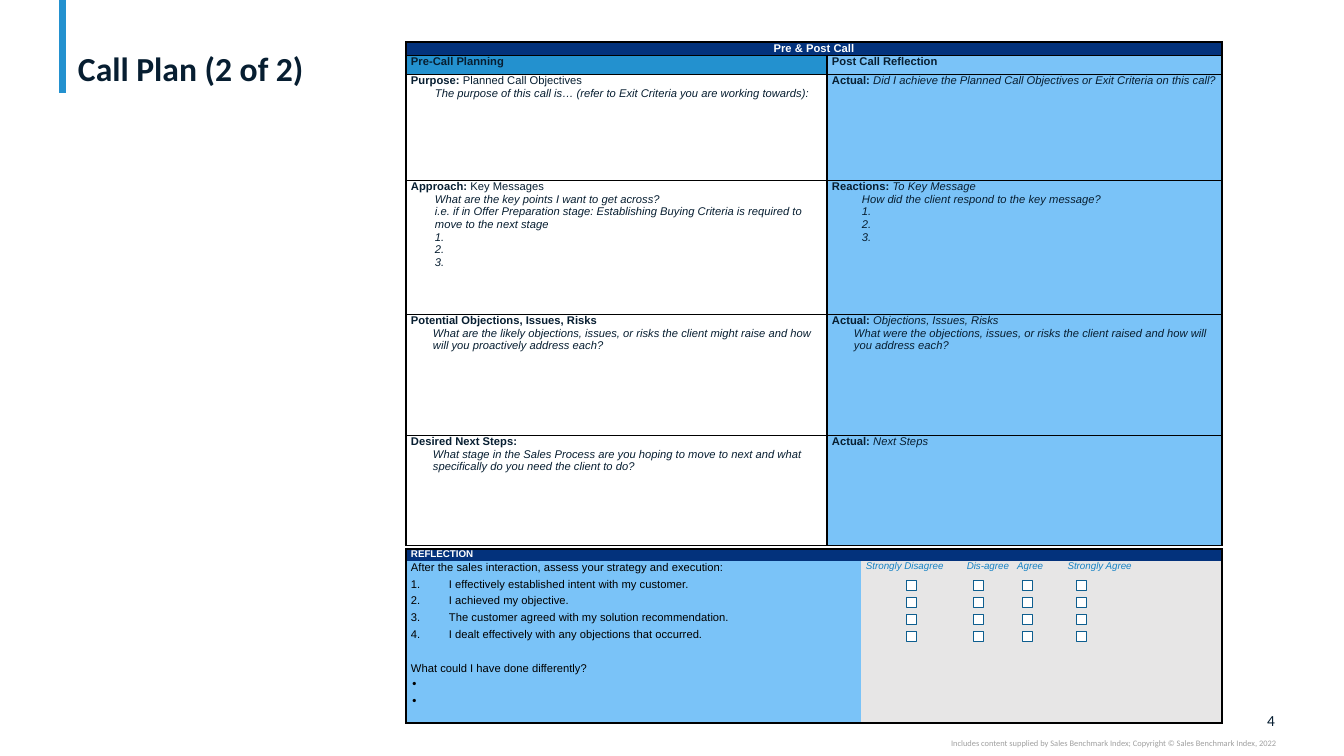
import pptx
import pptx.dml.color
import pptx.enum.shapes
import pptx.enum.text
import pptx.oxml.ns
import pptx.util
import lxml.etree

RGBColor = pptx.dml.color.RGBColor
INK = RGBColor(0x07, 0x1E, 0x31)
BLACK = RGBColor(0, 0, 0)
WHITE = RGBColor(0xFF, 0xFF, 0xFF)
NAVY = RGBColor(0x03, 0x32, 0x7C)
BLUE = RGBColor(0x23, 0x91, 0xCF)
SKY = RGBColor(0x7A, 0xC3, 0xF8)
PALE_GRAY = RGBColor(0xE7, 0xE6, 0xE6)
TEXT_GRAY = RGBColor(0xA0, 0xA0, 0xA0)
LABEL_BLUE = RGBColor(0x14, 0x81, 0xC4)
BOX_BLUE = RGBColor(0x0E, 0x5E, 0x8F)
PX = 914400 / 100.8
NO_STYLE = "{2D5ABB26-0587-4C30-8999-92F81FD0307C}"
qn = pptx.oxml.ns.qn
Align = pptx.enum.text.PP_ALIGN
Anchor = pptx.enum.text.MSO_ANCHOR


def write_paragraph(frame, runs, size=8, color=INK, name="Arial", indent=0, hanging=0,
                    before=0, align=Align.LEFT, marker=None, tabs=()):
    para = frame.paragraphs[0]
    if para.runs:
        para = frame.add_paragraph()
    para.alignment = align
    para.space_before = pptx.util.Pt(before)
    properties = para._p.get_or_add_pPr()
    properties.set("marL", str(round(indent * PX)))
    properties.set("indent", str(round(-hanging * PX)))
    if marker == "number":
        lxml.etree.SubElement(properties, qn("a:buAutoNum"), type="arabicPeriod")
    elif marker:
        lxml.etree.SubElement(properties, qn("a:buChar"), char=marker)
    else:
        lxml.etree.SubElement(properties, qn("a:buNone"))
    if tabs:
        stops = lxml.etree.SubElement(properties, qn("a:tabLst"))
        for stop in tabs:
            lxml.etree.SubElement(stops, qn("a:tab"), pos=str(round(stop * PX)), algn="l")
    for text, style in runs:
        span = para.add_run()
        span.text = text
        font_format = {"name": name, "size": pptx.util.Pt(size),
                       "bold": "b" in style, "italic": "i" in style}
        for key, value in font_format.items():
            setattr(span.font, key, value)
        span.font.color.rgb = color


def format_cell(cell, color, sides):
    margins = {"margin_left": 5, "margin_right": 5, "margin_top": 0, "margin_bottom": 0}
    for key, value in margins.items():
        setattr(cell, key, round(value * PX))
    properties = cell._tc.get_or_add_tcPr()
    for side in "LRTB":
        line = lxml.etree.SubElement(properties, qn("a:ln" + side), w="12700")
        if side in sides:
            paint = lxml.etree.SubElement(line, qn("a:solidFill"))
            lxml.etree.SubElement(paint, qn("a:srgbClr"), val=str(BLACK))
        else:
            lxml.etree.SubElement(line, qn("a:noFill"))
    cell.fill.solid()
    cell.fill.fore_color.rgb = color


deck = pptx.Presentation()
deck.slide_width = round(1344 * PX)
deck.slide_height = round(756 * PX)
page = deck.slides.add_slide(deck.slide_layouts[5])

accent = page.shapes.add_connector(pptx.enum.shapes.MSO_CONNECTOR.STRAIGHT,
                                   round(63 * PX), 0, round(63 * PX), round(93 * PX))
accent.line.color.rgb = BLUE
accent.line.width = pptx.util.Pt(5)
lxml.etree.SubElement(accent._element.spPr, qn("a:effectLst"))

title = page.shapes.title
title_place = {"left": 68, "top": 4, "width": 1208, "height": 85}
for key, value in title_place.items():
    setattr(title, key, round(value * PX))
title_format = {"margin_left": round(10 * PX), "margin_right": round(10 * PX),
                "margin_top": 0, "margin_bottom": 0, "vertical_anchor": Anchor.BOTTOM,
                "auto_size": pptx.enum.text.MSO_AUTO_SIZE.NONE, "word_wrap": True}
for key, value in title_format.items():
    setattr(title.text_frame, key, value)
write_paragraph(title.text_frame, [("Call Plan (2 of 2)", "b")], size=24, name="Calibri")
title.text_frame.paragraphs[0].line_spacing = 0.9

footers = [
    ("4", 1242, 711, 33, 19, 11, INK),
    ("Includes content supplied by Sales Benchmark Index; Copyright © Sales Benchmark Index, 2022",
     756, 738, 520, 10, 6, TEXT_GRAY),
]
for text, left, top, width, height, size, color in footers:
    box = page.shapes.add_textbox(*[round(value * PX) for value in (left, top, width, height)])
    box_format = {"margin_left": 0, "margin_right": 0, "margin_top": 0, "margin_bottom": 0,
                  "word_wrap": True, "vertical_anchor": Anchor.MIDDLE}
    for key, value in box_format.items():
        setattr(box.text_frame, key, value)
    write_paragraph(box.text_frame, [(text, "")], size=size, color=color, name="Calibri",
                    align=Align.RIGHT)

table_plans = [(42, [421, 395], [13, 19, 106, 134, 121, 110]), (549, [459, 357], [12, 162])]
table_plans[1][1][:] = [455, 361]
tables = []
for top, widths, heights in table_plans:
    frame = page.shapes.add_table(len(heights), 2, round(406 * PX), round(top * PX),
                                  round(sum(widths) * PX), round(sum(heights) * PX))
    table = frame.table
    table.first_row = False
    table.horz_banding = False
    table._tbl.tblPr.find(qn("a:tableStyleId")).text = NO_STYLE
    for column, width in zip(table.columns, widths):
        column.width = round(width * PX)
    for row, height in zip(table.rows, heights):
        row.height = round(height * PX)
    table.cell(0, 0).merge(table.cell(0, 1))
    tables.append(table)
call_table, reflection_table = tables

call_rows = [
    ([(0, [("Pre-Call Planning", "b")])],
     [(0, [("Post Call Reflection", "b")])]),
    ([(0, [("Purpose: ", "b"), ("Planned Call Objectives", "")]),
      (24, [("The purpose of this call is… (refer to Exit Criteria you are working towards):", "i")])],
     [(0, [("Actual: ", "b"),
           ("Did I achieve the Planned Call Objectives or Exit Criteria on this call?", "i")])]),
    ([(0, [("Approach: ", "b"), ("Key Messages", "")]),
      (24, [("What are the key points I want to get across?", "i")]),
      (24, [("i.e. if in Offer Preparation stage: Establishing Buying Criteria is required to "
             "move to the next stage", "i")])]
     + [(24, [(f"{number}.", "i")]) for number in range(1, 4)],
     [(0, [("Reactions: ", "b"), ("To Key Message", "i")]),
      (30, [("How did the client respond to the key message?", "i")])]
     + [(30, [(f"{number}.", "i")]) for number in range(1, 4)]),
    ([(0, [("Potential Objections, Issues, Risks", "b")]),
      (22, [("What are the likely objections, issues, or risks the client might raise and how "
             "will you proactively address each?", "i")])],
     [(0, [("Actual: ", "b"), ("Objections, Issues, Risks", "i")]),
      (22, [("What were the objections, issues, or risks the client raised and how will "
             "you address each?", "i")])]),
    ([(0, [("Desired Next Steps:", "b")]),
      (22, [("What stage in the Sales Process are you hoping to move to next and what "
             "specifically do you need the client to do?", "i")])],
     [(0, [("Actual: ", "b"), ("Next Steps", "i")])]),
]
for column in range(2):
    format_cell(call_table.cell(0, column), NAVY, "LRTB")
    format_cell(reflection_table.cell(0, column), NAVY, "LRT")
write_paragraph(call_table.cell(0, 0).text_frame, [("Pre & Post Call", "b")], color=WHITE,
                align=Align.CENTER)
for row, contents in enumerate(call_rows, start=1):
    for column, paragraphs in enumerate(contents):
        cell = call_table.cell(row, column)
        left_color = BLUE if row == 1 else WHITE
        format_cell(cell, SKY if column else left_color, "LRTB")
        for indent, runs in paragraphs:
            write_paragraph(cell.text_frame, runs, indent=indent)

write_paragraph(reflection_table.cell(0, 0).text_frame, [("REFLECTION", "b")], size=7, color=WHITE)
questions, ratings = reflection_table.cell(1, 0), reflection_table.cell(1, 1)
format_cell(questions, SKY, "LB")
format_cell(ratings, PALE_GRAY, "RB")
write_paragraph(questions.text_frame,
                [("After the sales interaction, assess your strategy and execution:", "")], color=BLACK)
statements = [
    "I effectively established intent with my customer.",
    "I achieved my objective.",
    "The customer agreed with my solution recommendation.",
    "I dealt effectively with any objections that occurred.",
]
for statement in statements:
    write_paragraph(questions.text_frame, [(statement, "")], color=BLACK, indent=38, hanging=38,
                    before=3, marker="number")
write_paragraph(questions.text_frame, [("What could I have done differently?", "")], color=BLACK,
                before=15)
for answer in range(2):
    write_paragraph(questions.text_frame, [(" ", "")], color=BLACK, indent=38, hanging=38,
                    before=3, marker="∙")
write_paragraph(ratings.text_frame, [("Strongly Disagree\tDis-agree\tAgree\tStrongly Agree", "i")],
                size=7, color=LABEL_BLUE, tabs=(88, 146, 186))

for left in (907, 974, 1023, 1077):
    for row in range(len(statements)):
        checkbox = page.shapes.add_shape(pptx.enum.shapes.MSO_SHAPE.RECTANGLE, round(left * PX),
                                         round((581 + 17 * row) * PX), round(10 * PX), round(10 * PX))
        checkbox.shadow.inherit = False
        checkbox.fill.solid()
        checkbox.fill.fore_color.rgb = WHITE
        checkbox.line.color.rgb = BOX_BLUE
        checkbox.line.width = pptx.util.Pt(0.75)

deck.save("out.pptx")
